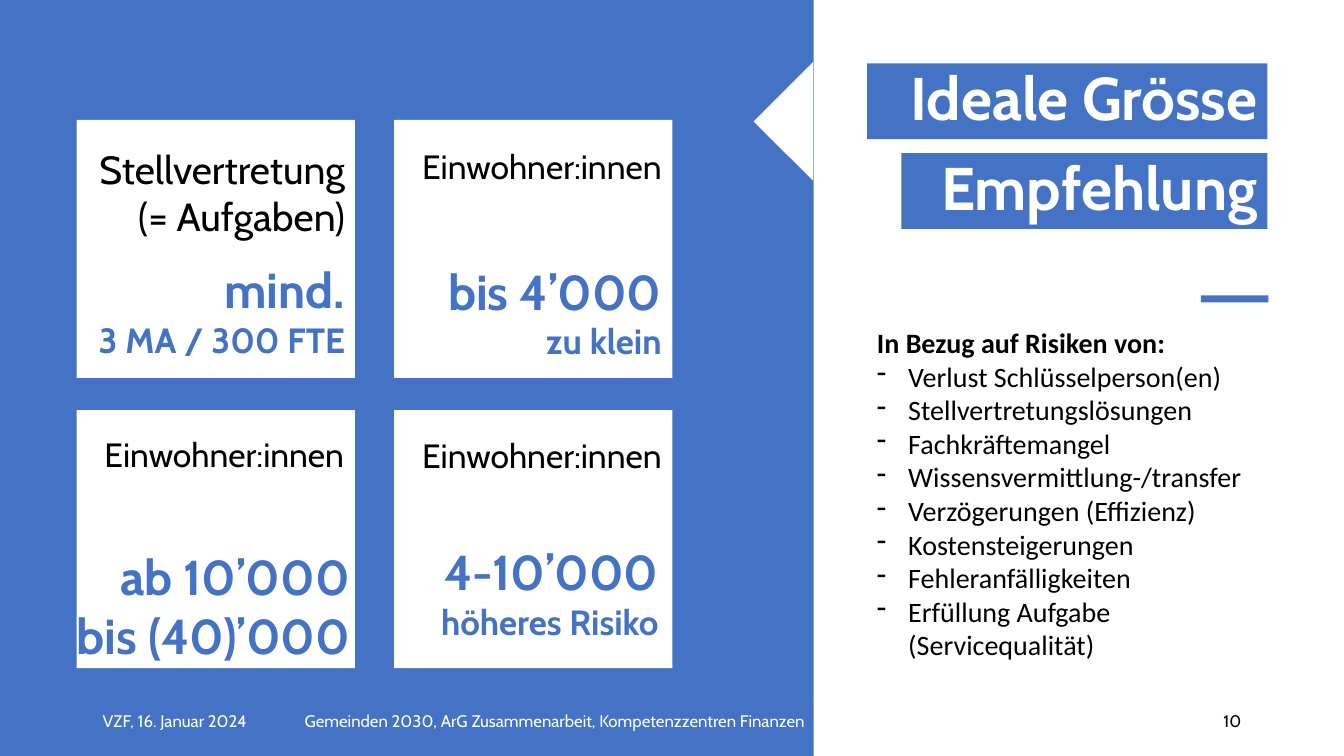
from lxml.etree import SubElement
from pptx import Presentation
from pptx.dml.color import RGBColor
from pptx.enum.shapes import MSO_SHAPE
from pptx.enum.text import MSO_ANCHOR, MSO_AUTO_SIZE, PP_ALIGN
from pptx.oxml.ns import qn
from pptx.util import Inches, Pt

BLUE = RGBColor(0x44, 0x72, 0xC4)
WHITE = RGBColor(0xFF, 0xFF, 0xFF)
BLACK = RGBColor(0, 0, 0)

RISKS = [
    "Verlust Schlüsselperson(en)",
    "Stellvertretungslösungen",
    "Fachkräftemangel",
    "Wissensvermittlung-/transfer",
    "Verzögerungen (Effizienz)",
    "Kostensteigerungen",
    "Fehleranfälligkeiten",
    "Erfüllung Aufgabe (Servicequalität)",
]

CARDS = [
    ("Stellvertretung (= Aufgaben)", 28, (0.76, 1.39),
     [("mind.", 35), ("3 MA / 300 FTE", 25)], (0.29, 2.53)),
    ("Einwohner:innen", 24, (3.9, 1.4),
     [("bis 4’000", 35), ("zu klein", 25)], (3.43, 2.54)),
    ("Einwohner:innen", 24, (0.75, 4.26),
     [("ab 10’000", 35), ("bis (40)’000", 35)], (0.34, 5.37)),
    ("Einwohner:innen", 24, (3.9, 4.27),
     [("4-10’000", 35), ("höheres Risiko", 25)], (3.4, 5.32)),
]


def write(frame, text, size=12, color=BLACK, bold=False, font="Cabin",
          align=PP_ALIGN.LEFT, first=True, bullet=None):
    para = frame.paragraphs[0] if first else frame.add_paragraph()
    para.alignment = align
    span = para.add_run()
    span.text = text
    span.font.name = font
    span.font.size = Pt(size)
    span.font.bold = bold
    span.font.color.rgb = color
    if bullet:
        properties = para._p.get_or_add_pPr()
        properties.set("marL", str(Inches(0.31)))
        properties.set("indent", str(-Inches(0.31)))
        SubElement(properties, qn("a:buChar")).set("char", bullet)
    return para


class SlideBuilder:
    def __init__(self, deck):
        self.page = deck.slides.add_slide(deck.slide_layouts[5])

    def block(self, left, top, width, height, color=BLUE, kind=MSO_SHAPE.RECTANGLE):
        box = self.page.shapes.add_shape(
            kind, Inches(left), Inches(top), Inches(width), Inches(height))
        box.shadow.inherit = False
        box.fill.solid()
        box.fill.fore_color.rgb = color
        box.line.fill.background()
        return box

    def text(self, left, top, width, height, lines, anchor=MSO_ANCHOR.TOP, **style):
        box = self.page.shapes.add_textbox(
            Inches(left), Inches(top), Inches(width), Inches(height))
        frame = box.text_frame
        frame.word_wrap = True
        frame.vertical_anchor = anchor
        for index, (line, size) in enumerate(lines):
            write(frame, line, size=size, first=index == 0, **style)
        return frame

    def headline(self, box, text):
        frame = box.text_frame
        frame.word_wrap = True
        frame.auto_size = MSO_AUTO_SIZE.NONE
        frame.vertical_anchor = MSO_ANCHOR.MIDDLE
        para = write(frame, text, size=43, color=WHITE, bold=True, align=PP_ALIGN.RIGHT)
        para.line_spacing = 0.9
        para.space_before = Pt(10)

    def title(self, left, top, width, height, text):
        box = self.page.shapes.title
        box.left, box.top = Inches(left), Inches(top)
        box.width, box.height = Inches(width), Inches(height)
        box.fill.solid()
        box.fill.fore_color.rgb = BLUE
        self.headline(box, text)

    def footer(self, left, width, text, color=WHITE, align=PP_ALIGN.LEFT):
        self.text(left, 6.95, width, 0.4, [(text, 12)], MSO_ANCHOR.MIDDLE,
                  color=color, align=align)

    def card(self, index, label, label_size, label_at, figures, figures_at):
        row, column = divmod(index, 2)
        self.block(0.76 + 3.15 * column, 1.19 + 2.88 * row, 2.76, 2.56, WHITE)
        self.text(*label_at, 2.76, 1, [(label, label_size)], align=PP_ALIGN.RIGHT)
        self.text(*figures_at, 3.23, 1.11, figures, color=BLUE, bold=True,
                  align=PP_ALIGN.RIGHT)


def main():
    deck = Presentation()
    deck.slide_width, deck.slide_height = Inches(13.33), Inches(7.5)
    builder = SlideBuilder(deck)

    builder.block(0, 0, 8.07, 7.5)
    notch = builder.block(7.18, 0.91, 1.18, 0.59, WHITE, MSO_SHAPE.ISOSCELES_TRIANGLE)
    notch.rotation = 270
    builder.block(11.91, 2.93, 0.67, 0.07)

    builder.title(8.6, 0.63, 3.97, 0.75, "Ideale Grösse")
    builder.headline(builder.block(8.94, 1.52, 3.63, 0.75), "Empfehlung")

    for index, card in enumerate(CARDS):
        builder.card(index, *card)

    risks = builder.text(8.6, 3.18, 3.97, 3.47, [("In Bezug auf Risiken von:", 20)],
                         font="Calibri", bold=True)
    for risk in RISKS:
        write(risks, risk, size=20, font="Calibri", first=False, bullet="-")

    builder.footer(0.92, 1.69, "VZF, 16. Januar 2024")
    builder.footer(2.85, 5.31, "Gemeinden 2030, ArG Zusammenarbeit, Kompetenzzentren Finanzen",
                   align=PP_ALIGN.CENTER)
    builder.footer(10.58, 1.83, "10", BLACK, PP_ALIGN.RIGHT)

    deck.save("out.pptx")


if __name__ == "__main__":
    main()
